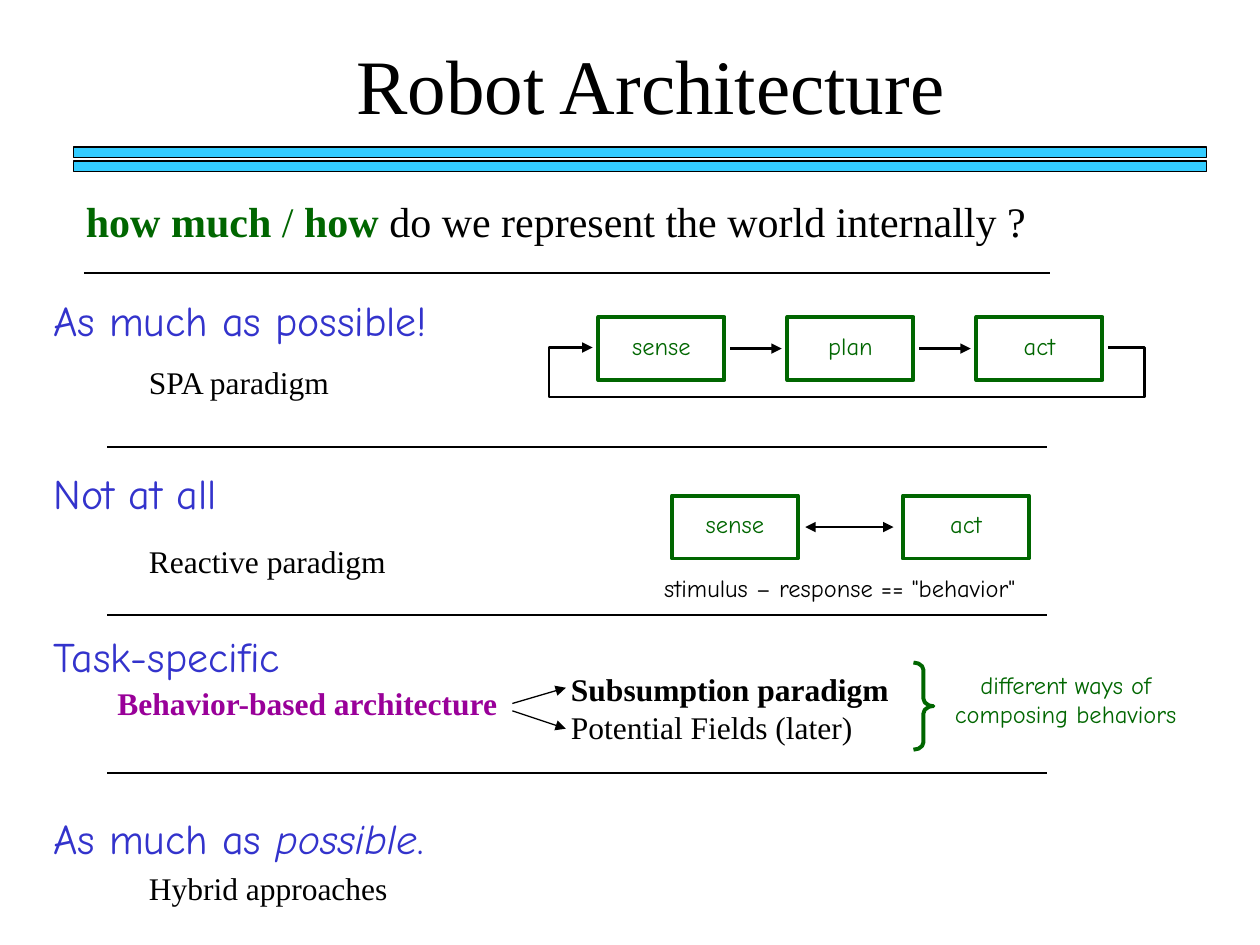
from dataclasses import dataclass
from lxml.etree import SubElement
from pptx import Presentation
from pptx.dml.color import RGBColor
from pptx.enum.shapes import MSO_CONNECTOR as Connector, MSO_SHAPE as Shape
from pptx.enum.text import MSO_ANCHOR as Anchor, MSO_AUTO_SIZE as AutoSize, PP_ALIGN as Align
from pptx.oxml.ns import qn
from pptx.util import Inches, Pt


@dataclass(frozen=True)
class Theme:
    serif: str = "Times New Roman"
    casual: str = "Comic Neue"
    black: str = "000000"
    green: str = "006600"
    blue: str = "3333CC"
    purple: str = "990099"
    cyan: str = "33CCFF"
    title: int = 44
    heading: int = 24
    body: int = 18
    label: int = 14
    hairline: float = 0.75
    divider: float = 1
    stroke: float = 1.5
    frame: float = 2.25


@dataclass(frozen=True)
class Span:
    text: str
    color: str = Theme.black
    bold: bool = False
    italic: bool = False


@dataclass(frozen=True)
class Box:
    left: float
    top: float
    width: float
    height: float

    def area(self, left, top, width, height):
        return Box(self.left + left, self.top + top, width, height)

    def point(self, x, y):
        return grid(self.left + x), grid(self.top + y)

    def place(self):
        return [grid(n) for n in (self.left, self.top, self.width, self.height)]


THEME = Theme()
UNITS_PER_INCH = 12
COLUMNS, ROWS = 120, 90
NODE_WIDTH, NODE_HEIGHT, NODE_MIDDLE = 12, 6, 3


def grid(units):
    return Inches(units / UNITS_PER_INCH)


def write(frame, spans, size, font, align=Align.LEFT, spacing=None):
    frame.word_wrap = True
    para = frame.paragraphs[0]
    para.alignment = align
    if spacing:
        para.line_spacing = spacing
    for span in spans:
        run = para.add_run()
        run.text = span.text
        run.font.name, run.font.size = font, Pt(size)
        run.font.bold, run.font.italic = span.bold, span.italic
        run.font.color.rgb = RGBColor.from_string(span.color)


def add_text(page, box, spans, size, font=THEME.serif, align=Align.LEFT, spacing=None):
    frame = page.shapes.add_textbox(*box.place()).text_frame
    write(frame, spans, size, font, align, spacing)
    frame.auto_size = AutoSize.SHAPE_TO_FIT_TEXT


def set_line(shape, color, weight, head=False, tail=False):
    shape.line.color.rgb = RGBColor.from_string(color)
    shape.line.width = Pt(weight)
    for tag, wanted in (("a:headEnd", head), ("a:tailEnd", tail)):
        if wanted:
            SubElement(shape.element.spPr.get_or_add_ln(), qn(tag), type="triangle")


def add_outline(page, kind, box, color, weight, fill=None):
    shape = page.shapes.add_shape(kind, *box.place())
    shape.shadow.inherit = False
    if fill:
        shape.fill.solid()
        shape.fill.fore_color.rgb = RGBColor.from_string(fill)
    else:
        shape.fill.background()
    set_line(shape, color, weight)
    return shape


def add_line(page, start, end, weight, head=False, tail=False):
    line = page.shapes.add_connector(Connector.STRAIGHT, *start, *end)
    set_line(line, THEME.black, weight, head, tail)
    SubElement(line.element.spPr, qn("a:effectLst"))


def add_node(page, box, label):
    node = add_outline(page, Shape.RECTANGLE, box, THEME.green, THEME.frame)
    frame = node.text_frame
    frame.vertical_anchor = Anchor.MIDDLE
    frame.margin_bottom = Inches(0.1)
    write(frame, [Span(label, THEME.green)], THEME.label, THEME.casual, Align.CENTER)


def add_header(page, box):
    add_text(page, box.area(12, 0, 86, 10), [Span("Robot Architecture")],
             THEME.title, align=Align.CENTER)
    for top in (11, 12.35):
        add_outline(page, Shape.RECTANGLE, box.area(0, top, box.width, 1),
                    THEME.black, THEME.hairline, THEME.cyan)
    question = [Span("how much", THEME.green, bold=True), Span(" / ", THEME.green),
                Span("how", THEME.green, bold=True),
                Span(" do we represent the world internally ?")]
    add_text(page, box.area(0, 15, 94, 6), question, THEME.heading)
    add_line(page, box.point(1, box.height), box.point(93, box.height), THEME.stroke)


def add_section(page, box, heading, detail, indent, drop, ruled=True):
    add_text(page, box.area(0, 0, 44, 7.4), heading, THEME.heading, THEME.casual, spacing=1.3)
    add_text(page, box.area(indent, drop, 45, 4.8), [detail], THEME.body)
    if ruled:
        add_line(page, box.point(6.3, box.height), box.point(box.width, box.height),
                 THEME.divider)


def add_loop_diagram(page, box):
    first, step, gap = 4.7, 18, 0.55
    for index, label in enumerate(("sense", "plan", "act")):
        left = first + index * step
        add_node(page, box.area(left, 0, NODE_WIDTH, NODE_HEIGHT), label)
        if index:
            add_line(page, box.point(left - step + NODE_WIDTH + gap, NODE_MIDDLE),
                     box.point(left - gap, NODE_MIDDLE), THEME.stroke, tail=True)
    turns = [(box.width, 2.9), (box.width, box.height), (0, box.height),
             (0, 2.9), (first - gap, 2.9)]
    start = box.point(first + 2 * step + NODE_WIDTH + gap, 2.9)
    builder = page.shapes.build_freeform(*start, scale=1)
    builder.add_line_segments([box.point(*turn) for turn in turns], close=False)
    loop = builder.convert_to_shape()
    loop.shadow.inherit = False
    loop.fill.background()
    set_line(loop, THEME.black, THEME.stroke, tail=True)


def add_reactive_diagram(page, box):
    for left, label in ((5, "sense"), (27, "act")):
        add_node(page, box.area(left, 0, NODE_WIDTH, NODE_HEIGHT), label)
    add_line(page, box.point(17.7, NODE_MIDDLE), box.point(26.1, NODE_MIDDLE),
             THEME.stroke, head=True, tail=True)
    add_text(page, box.area(0, 6.8, box.width, 4),
             [Span('stimulus – response == "behavior"')],
             THEME.label, THEME.casual, Align.CENTER)


def add_behavior_branches(page, box):
    add_text(page, box.area(4.4, 0.1, 42, 4.8),
             [Span("Subsumption paradigm", bold=True)], THEME.body)
    add_text(page, box.area(4.4, 3.7, 31, 4.8), [Span("Potential Fields (later)")], THEME.body)
    for start, end in ((3.9, 2.4), (4.6, 6.3)):
        add_line(page, box.point(0, start), box.point(5.1, end), THEME.hairline, tail=True)
    brace = add_outline(page, Shape.RIGHT_BRACE, box.area(38.2, 0, 1.9, box.height),
                        THEME.green, THEME.frame)
    brace.adjustments[0] = 0.37
    add_text(page, box.area(39.2, 0.1, 27, 6.8),
             [Span("different ways of composing behaviors", THEME.green)],
             THEME.label, THEME.casual, Align.CENTER)


def main():
    deck = Presentation()
    deck.slide_width, deck.slide_height = grid(COLUMNS), grid(ROWS)
    page = deck.slides.add_slide(deck.slide_layouts[6])
    add_header(page, Box(7, 3, 107.9, 23))
    add_section(page, Box(3.9, 26, 95.8, 16.6), [Span("As much as possible!", THEME.blue)],
                Span("SPA paradigm"), 9.1, 8)
    add_section(page, Box(3.9, 42.5, 95.8, 16.1), [Span("Not at all", THEME.blue)],
                Span("Reactive paradigm"), 9.1, 8.5)
    add_section(page, Box(3.9, 58, 95.8, 15.6), [Span("Task-specific", THEME.blue)],
                Span("Behavior-based architecture", THEME.purple, bold=True), 6.1, 6.6)
    hybrid = [Span("As much as ", THEME.blue), Span("possible", THEME.blue, italic=True),
              Span(".", THEME.blue)]
    add_section(page, Box(3.9, 75.4, 95.8, 11.6), hybrid,
                Span("Hybrid approaches"), 9.1, 6.8, ruled=False)
    add_loop_diagram(page, Box(52.3, 30.2, 56.7, 7.6))
    add_reactive_diagram(page, Box(59, 47.2, 42, 10.8))
    add_behavior_branches(page, Box(48.8, 63.1, 66.2, 8.3))
    deck.save("out.pptx")


if __name__ == "__main__":
    main()
